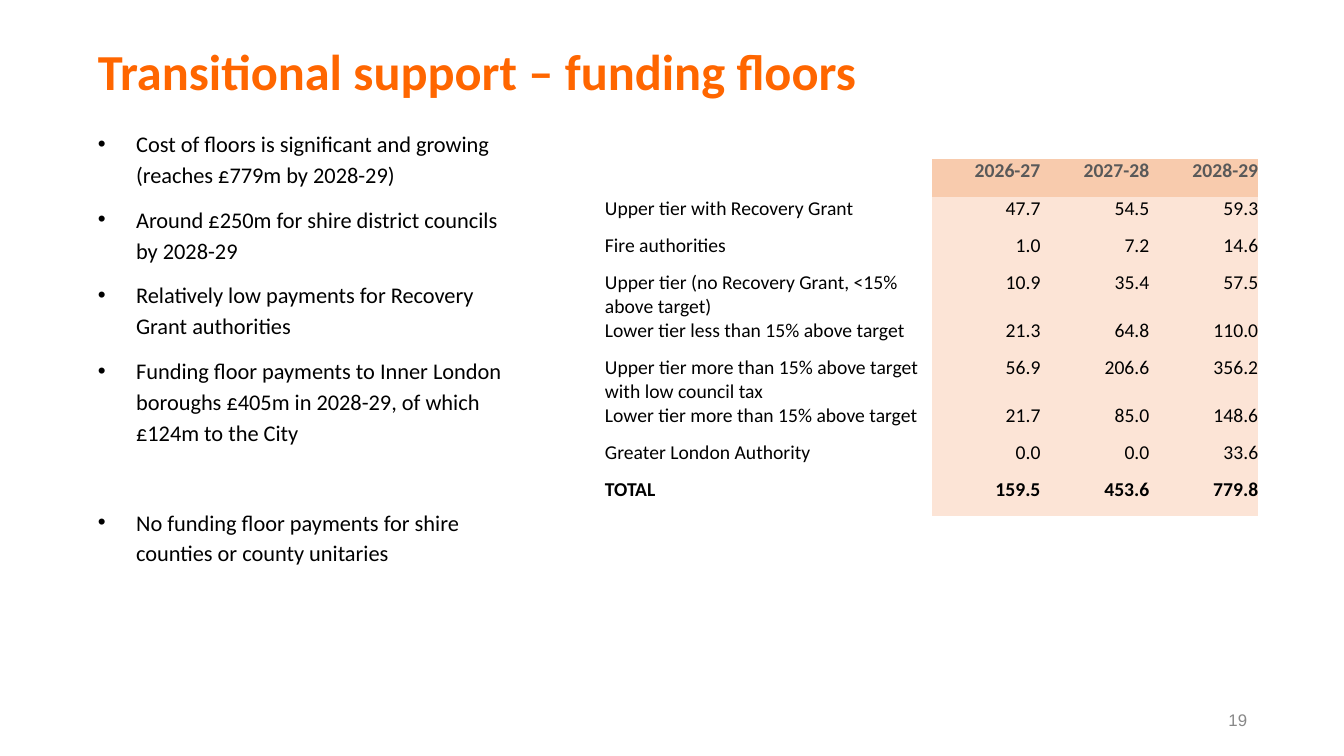
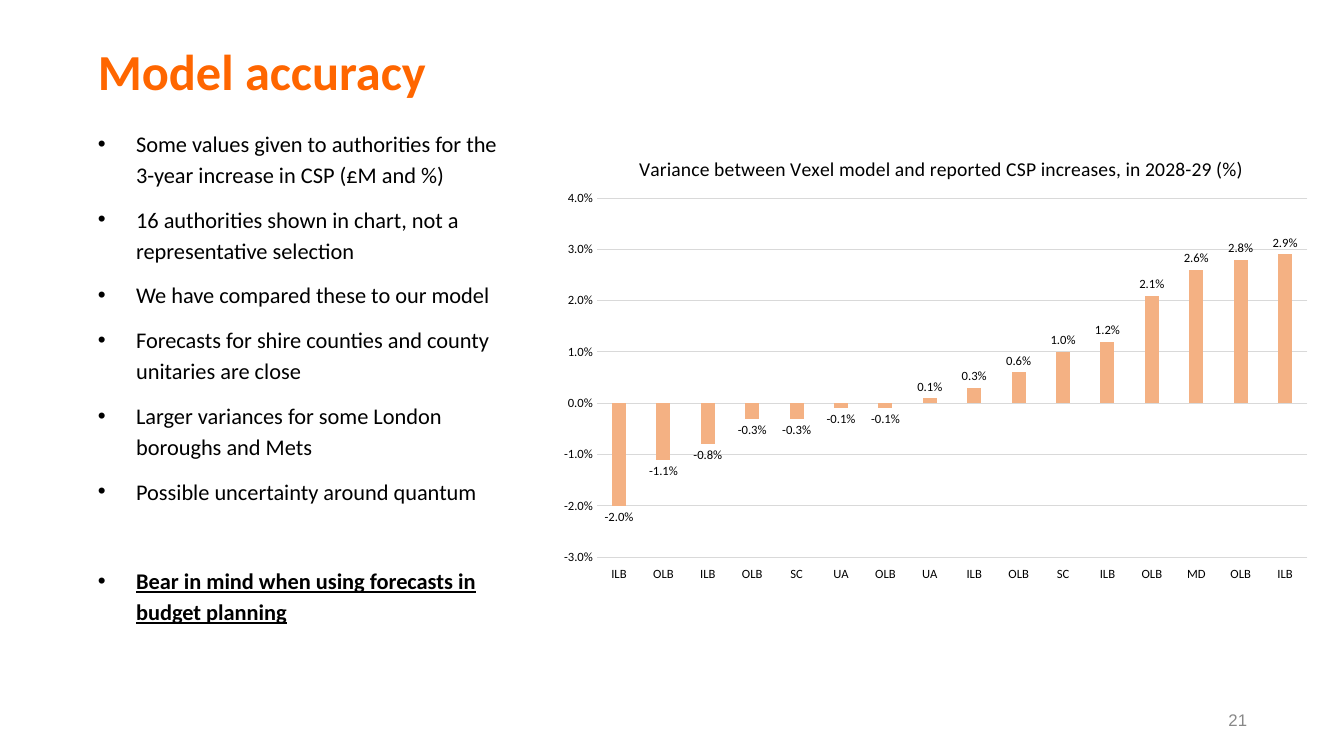
"""Build two slides on funding floors and model accuracy."""
from dataclasses import dataclass

from lxml import etree
from pptx import Presentation
from pptx.chart.data import CategoryChartData
from pptx.dml.color import RGBColor
from pptx.enum.chart import (XL_CHART_TYPE, XL_LABEL_POSITION,
                             XL_TICK_LABEL_POSITION, XL_TICK_MARK)
from pptx.enum.text import MSO_ANCHOR, MSO_AUTO_SIZE, PP_ALIGN
from pptx.oxml.ns import qn
from pptx.util import Inches, Pt

COLUMN = XL_CHART_TYPE.COLUMN_CLUSTERED
OUTER = XL_LABEL_POSITION.OUTSIDE_END
LOW = XL_TICK_LABEL_POSITION.LOW
NO_TICK = XL_TICK_MARK.NONE
TOP = MSO_ANCHOR.TOP
MIDDLE = MSO_ANCHOR.MIDDLE
FIXED = MSO_AUTO_SIZE.NONE
LEFT = PP_ALIGN.LEFT
RIGHT = PP_ALIGN.RIGHT
PLAIN = "{2D5ABB26-0587-4C30-8999-92F81FD0307C}"


@dataclass(frozen=True)
class Theme:
    """Hold the shared colours, fonts and type sizes."""
    face: str = "Calibri"
    foot: str = "Arial"
    accent: str = "FF6600"
    ink: str = "000000"
    head: str = "595959"
    page: str = "888888"
    band: str = "F8CBAD"
    tint: str = "FCE4D6"
    bar: str = "F4B183"
    grid: str = "D9D9D9"
    title: int = 36
    body: int = 16
    cell: int = 14
    note: int = 12
    tick: int = 9
    gap: int = 10
    wide: int = 42


THEME = Theme()

FLOORS = [
    "Cost of floors is significant and growing (reaches £779m by 2028-29)",
    "Around £250m for shire district councils by 2028-29",
    "Relatively low payments for Recovery Grant authorities",
    "Funding floor payments to Inner London boroughs £405m in 2028-29, "
    "of which £124m to the City",
    "No funding floor payments for shire counties or county unitaries",
]
MODEL = [
    "Some values given to authorities for the 3-year increase in CSP "
    "(£M and %)",
    "16 authorities shown in chart, not a representative selection",
    "We have compared these to our model",
    "Forecasts for shire counties and county unitaries are close",
    "Larger variances for some London boroughs and Mets",
    "Possible uncertainty around quantum",
    "Bear in mind when using forecasts in budget planning",
]
COSTS = [
    ("", "2026-27", "2027-28", "2028-29"),
    ("Upper tier with Recovery Grant", "47.7", "54.5", "59.3"),
    ("Fire authorities", "1.0", "7.2", "14.6"),
    ("Upper tier (no Recovery Grant, <15% above target)",
     "10.9", "35.4", "57.5"),
    ("Lower tier less than 15% above target", "21.3", "64.8", "110.0"),
    ("Upper tier more than 15% above target with low council tax",
     "56.9", "206.6", "356.2"),
    ("Lower tier more than 15% above target", "21.7", "85.0", "148.6"),
    ("Greater London Authority", "0.0", "0.0", "33.6"),
    ("TOTAL", "159.5", "453.6", "779.8"),
]
KINDS = ("ILB OLB ILB OLB SC UA OLB UA "
         "ILB OLB SC ILB OLB MD OLB ILB").split()
GAPS = [-2.0, -1.1, -0.8, -0.3, -0.3, -0.1, -0.1, 0.1,
        0.3, 0.6, 1.0, 1.2, 2.1, 2.6, 2.8, 2.9]


def style(font, size, color=THEME.ink, bold=False, face=THEME.face):
    """Set the face, size, colour and weight of a font."""
    font.name = face
    font.size = Pt(size)
    font.bold = bold
    font.color.rgb = RGBColor.from_string(color)


def write(para, text, size, align=LEFT, **look):
    """Add one styled run to a paragraph and return it."""
    para.alignment = align
    run = para.add_run()
    run.text = text
    style(run.font, size, **look)
    return run


def place(shape, left, top, width, height):
    """Move and size a shape in inches."""
    shape.left, shape.top = Inches(left), Inches(top)
    shape.width, shape.height = Inches(width), Inches(height)


def frame(shape, anchor):
    """Prepare the text frame of a shape and return it."""
    text = shape.text_frame
    text.word_wrap = True
    text.auto_size = FIXED
    text.vertical_anchor = anchor
    text.margin_left = text.margin_right = Inches(0.05)
    text.margin_top = text.margin_bottom = Inches(0.05)
    return text


def bullet(para):
    """Give a paragraph a hanging round bullet."""
    props = para._p.get_or_add_pPr()
    props.set("marL", str(Inches(0.38)))
    props.set("indent", str(-Inches(0.38)))
    etree.SubElement(props, qn("a:buFont")).set("typeface", THEME.foot)
    etree.SubElement(props, qn("a:buChar")).set("char", "•")


def points(shape, items, strong):
    """Fill the body with bullets, the last one set apart."""
    text = frame(shape, TOP)
    final = len(items) - 1
    for i, item in enumerate(items):
        para = text.add_paragraph() if i else text.paragraphs[0]
        bullet(para)
        para.line_spacing = 1.15
        space = THEME.wide if i == final else THEME.gap
        para.space_before = Pt(space if i else 0)
        para.space_after = Pt(0)
        loud = strong and i == final
        run = write(para, item, THEME.body, bold=loud)
        run.font.underline = loud


def page(deck, title, items, number, width, strong=False):
    """Add a slide with its title, bullets and page number."""
    slide = deck.slides.add_slide(deck.slide_layouts[1])
    head, body = slide.shapes.title, slide.placeholders[1]
    place(head, 0.92, 0.41, 11.5, 0.66)
    para = frame(head, MIDDLE).paragraphs[0]
    para.line_spacing = 0.9
    write(para, title, THEME.title, color=THEME.accent, bold=True)
    place(body, 0.92, 1.2, width, 5.55)
    points(body, items, strong)
    foot = slide.shapes.add_textbox(
        Inches(11.92), Inches(7), Inches(0.5), Inches(0.29))
    write(frame(foot, MIDDLE).paragraphs[0], str(number), THEME.note,
          align=RIGHT, color=THEME.page, face=THEME.foot)
    return slide


def paint(cell, text, row, col, last):
    """Write and fill one table cell by its row and column."""
    cell.margin_left = cell.margin_right = 0
    cell.margin_top = cell.margin_bottom = 0
    if col:
        cell.fill.solid()
        tone = THEME.tint if row else THEME.band
        cell.fill.fore_color.rgb = RGBColor.from_string(tone)
    else:
        cell.fill.background()
    if text:
        write(cell.text_frame.paragraphs[0], text, THEME.cell,
              align=RIGHT if col else LEFT,
              color=THEME.ink if row else THEME.head,
              bold=row in (0, last))


def grid(slide, rows):
    """Add the table of costs by year."""
    count = len(rows)
    shape = slide.shapes.add_table(
        count, len(rows[0]), Inches(6), Inches(1.58),
        Inches(6.48), Inches(0.37 * count))
    for tag in shape.element.iter(qn("a:tableStyleId")):
        tag.text = PLAIN
    table = shape.table
    table.first_row = table.horz_banding = False
    for i, col in enumerate(table.columns):
        col.width = Inches(1.08 if i else 3.24)
    for i, row in enumerate(rows):
        table.rows[i].height = Inches(0.37)
        for j, text in enumerate(row):
            paint(table.cell(i, j), text, i, j, count - 1)


def layout(part, **spots):
    """Fix the place of a chart part as shares of the chart."""
    box = part.find(qn("c:layout"))
    if box is None:
        box = etree.Element(qn("c:layout"))
        part.insert(0 if part.find(qn("c:tx")) is None else 1, box)
    manual = etree.SubElement(box, qn("c:manualLayout"))
    if "w" in spots:
        etree.SubElement(manual, qn("c:layoutTarget")).set("val", "inner")
    for key in ("x", "y"):
        etree.SubElement(manual, qn(f"c:{key}Mode")).set("val", "edge")
    for key, share in spots.items():
        etree.SubElement(manual, qn(f"c:{key}")).set("val", str(share))


def line(form):
    """Draw a thin grey chart line."""
    form.line.color.rgb = RGBColor.from_string(THEME.grid)
    form.line.width = Pt(0.75)


def axes(chart):
    """Format both axes of the chart."""
    cats, vals = chart.category_axis, chart.value_axis
    for axis in (cats, vals):
        axis.major_tick_mark = axis.minor_tick_mark = NO_TICK
        style(axis.tick_labels.font, THEME.tick)
    cats.tick_label_position = LOW
    line(cats.format)
    vals.minimum_scale, vals.maximum_scale = -0.03, 0.04
    vals.major_unit = 0.01
    vals.has_major_gridlines = True
    line(vals.major_gridlines.format)
    vals.format.line.fill.background()
    vals.tick_labels.number_format = "0.0%"
    vals.tick_labels.number_format_is_linked = False


def bars(slide, title, names, shares):
    """Add the column chart of variances."""
    data = CategoryChartData(number_format="0.0%")
    data.categories = names
    data.add_series("Series 1", [round(n / 100, 3) for n in shares])
    chart = slide.shapes.add_chart(
        COLUMN, Inches(5.46), Inches(1.28), Inches(7.66), Inches(4.57),
        data).chart
    style(chart.font, 10)
    chart.has_legend = False
    chart.has_title = True
    write(chart.chart_title.text_frame.paragraphs[0], title, THEME.cell)
    axes(chart)
    plot = chart.plots[0]
    plot.gap_width, plot.overlap = 219, -27
    plot.vary_by_categories = False
    series = plot.series[0]
    series.invert_if_negative = False
    series.format.fill.solid()
    series.format.fill.fore_color.rgb = RGBColor.from_string(THEME.bar)
    labels = series.data_labels
    labels.show_value = True
    labels.position = OUTER
    labels.number_format = "0.0%"
    labels.number_format_is_linked = False
    style(labels.font, THEME.tick)
    root = chart.element.find(qn("c:chart"))
    layout(root.find(qn("c:title")), x=0.11, y=0.05)
    layout(root.find(qn("c:plotArea")), x=0.06, y=0.15, w=0.92, h=0.78)


def main():
    """Build and save the deck."""
    deck = Presentation()
    deck.slide_width, deck.slide_height = Inches(13.33), Inches(7.5)
    slide = page(deck, "Transitional support – funding floors",
                 FLOORS, 19, 4.2)
    grid(slide, COSTS)
    slide = page(deck, "Model accuracy", MODEL, 21, 4.25, strong=True)
    bars(slide, "Variance between Vexel model and reported CSP increases, "
         "in 2028-29 (%)", KINDS, GAPS)
    deck.save("out.pptx")


if __name__ == "__main__":
    main()
